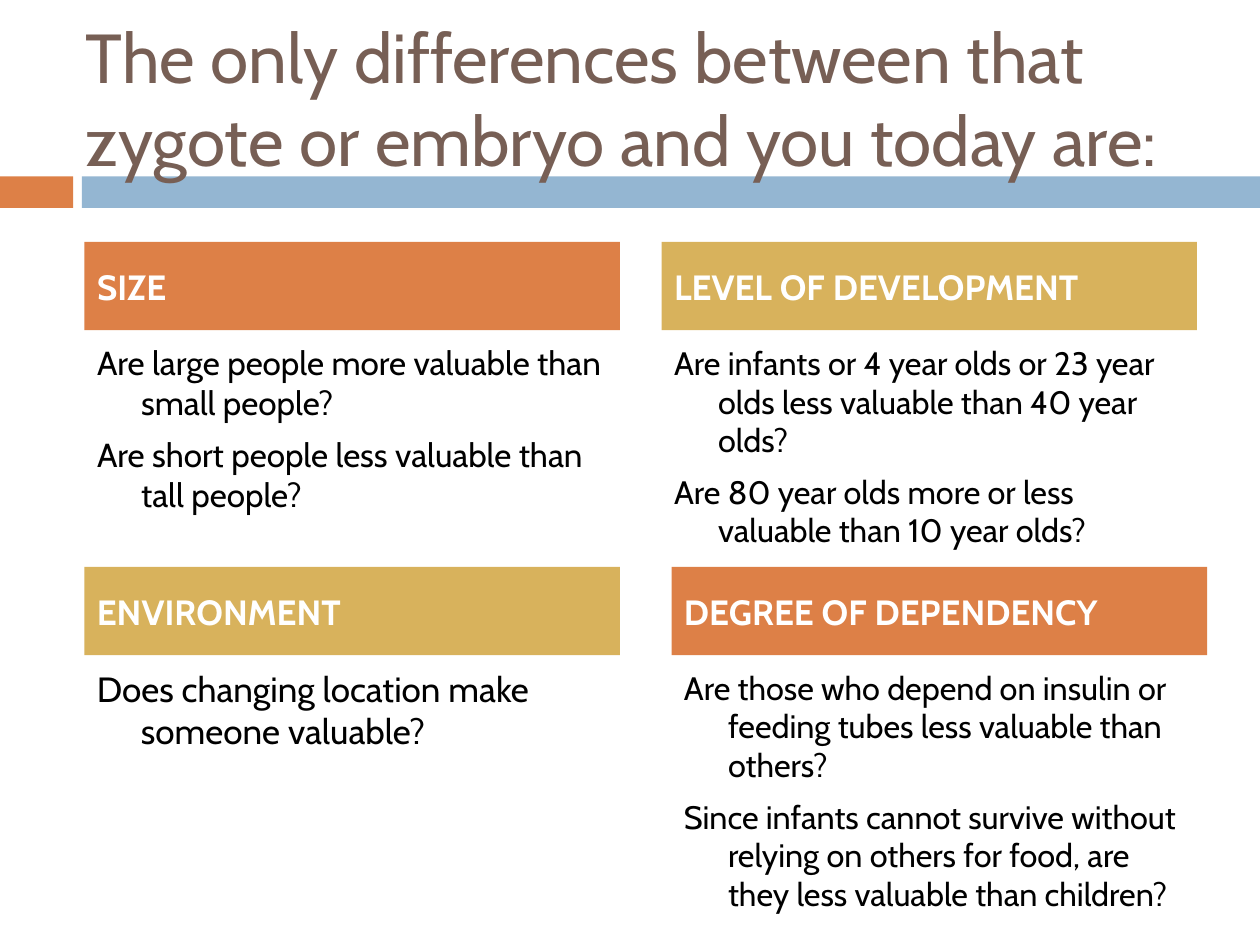
import pptx
import pptx.dml.color
import pptx.enum.shapes
import pptx.enum.text
import pptx.util
from lxml import etree

Inches = pptx.util.Inches
Pt = pptx.util.Pt
ANCHOR = pptx.enum.text.MSO_ANCHOR
ORANGE, GOLD, BLUE = "DD8047", "D8B25C", "94B6D2"
BROWN, BLACK, WHITE = "775F55", "000000", "FFFFFF"
COLUMN_WIDTH, HEADING_HEIGHT, QUESTIONS_OFFSET = 4.25, 0.7, 0.75
HANGING_INDENT = 0.35

# heading, fill, left, top, questions height, question size, placeholder ids, questions
TOPICS = [
    ("SIZE", ORANGE, 0.67, 1.92, 1.83, 19, (1, 2),
     ["Are large people more valuable than small people?",
      "Are short people less valuable than tall people?"]),
    ("LEVEL OF DEVELOPMENT", GOLD, 5.25, 1.92, 1.5, 18.5, (3, 4),
     ["Are infants or 4 year olds or 23 year olds less valuable than 40 year olds?",
      "Are 80 year olds more or less valuable than 10 year olds?"]),
    ("ENVIRONMENT", GOLD, 0.67, 4.5, 1.75, 20, None,
     ["Does changing location make someone valuable?"]),
    ("DEGREE OF DEPENDENCY", ORANGE, 5.33, 4.5, 1.75, 18.5, None,
     ["Are those who depend on insulin or feeding tubes less valuable than others?",
      "Since infants cannot survive without relying on others for food, "
      "are they less valuable than children?"]),
]


def color(hex_value):
    """Return the RGB colour for a hex string."""
    return pptx.dml.color.RGBColor.from_string(hex_value)


def apply_format(target, values):
    """Set each attribute named in a dict of format values."""
    for name, value in values.items():
        setattr(target, name, value)


def place(part, left, top, width, height):
    """Move and size a part, given in inches."""
    apply_format(part, {"left": Inches(left), "top": Inches(top),
                        "width": Inches(width), "height": Inches(height)})


def fill_solid(part, hex_value):
    """Fill a part with one colour and leave out its line."""
    part.fill.solid()
    part.fill.fore_color.rgb = color(hex_value)
    part.line.fill.background()


def add_bar(slide, left, top, width, height, hex_value):
    """Add a plain filled rectangle."""
    bar = slide.shapes.add_shape(pptx.enum.shapes.MSO_SHAPE.RECTANGLE, Inches(left),
                                 Inches(top), Inches(width), Inches(height))
    bar.shadow.inherit = False
    fill_solid(bar, hex_value)
    return bar


def write_text(part, lines, size, hex_value, anchor, bold=False, space=7):
    """Write left-aligned paragraphs in one format."""
    frame = part.text_frame
    apply_format(frame, {"word_wrap": True, "vertical_anchor": anchor,
                         "auto_size": pptx.enum.text.MSO_AUTO_SIZE.NONE})
    frame.text = "\n".join(lines)
    for paragraph in frame.paragraphs:
        apply_format(paragraph, {"alignment": pptx.enum.text.PP_ALIGN.LEFT,
                                 "space_before": Pt(space)})
        font = paragraph.runs[0].font
        apply_format(font, {"name": "Cabin", "size": Pt(size), "bold": bold})
        font.color.rgb = color(hex_value)


def hang_paragraphs(part):
    """Give paragraphs a hanging indent without bullets."""
    for paragraph in part.text_frame.paragraphs:
        paragraph.level = 4
        properties = paragraph._p.get_or_add_pPr()
        properties.set("marL", str(Inches(HANGING_INDENT)))
        properties.set("indent", str(-Inches(HANGING_INDENT)))
        etree.SubElement(properties, pptx.oxml.ns.qn("a:buNone"))


def add_topic(slide, heading, fill, left, top, height, size, placeholder_ids, questions):
    """Add a coloured heading with its questions below."""
    heading_box = (left, top, COLUMN_WIDTH, HEADING_HEIGHT)
    questions_box = (left, top + QUESTIONS_OFFSET, COLUMN_WIDTH, height)
    if placeholder_ids:
        heading_part, questions_part = [slide.placeholders[i] for i in placeholder_ids]
        place(heading_part, *heading_box)
        fill_solid(heading_part, fill)
        place(questions_part, *questions_box)
    else:
        heading_part = add_bar(slide, *heading_box, fill)
        questions_part = slide.shapes.add_textbox(*map(Inches, questions_box))
    write_text(heading_part, [heading], 20, WHITE, ANCHOR.MIDDLE, bold=True)
    write_text(questions_part, questions, size, BLACK, ANCHOR.TOP)
    hang_paragraphs(questions_part)


def add_title(slide, wording):
    """Fill and place the slide title above the bars."""
    title = slide.shapes.title
    place(title, 0.58, 0.3, 8.92, 0.95)
    write_text(title, [wording], 39.6, BROWN, ANCHOR.MIDDLE, space=0)
    tree = slide.shapes._spTree
    tree.remove(title._element)
    tree.append(title._element)


def main():
    """Build and save the slide."""
    deck = pptx.Presentation()
    apply_format(deck, {"slide_width": Inches(10), "slide_height": Inches(7.5)})
    slide = deck.slides.add_slide(deck.slide_layouts.get_by_name("Comparison"))
    add_bar(slide, 0, 1.4, 0.58, 0.25, ORANGE)
    add_bar(slide, 0.65, 1.4, 9.35, 0.25, BLUE)
    add_title(slide, "The only differences between that zygote or embryo and you today are:")
    for topic in TOPICS:
        add_topic(slide, *topic)
    deck.save("out.pptx")


if __name__ == "__main__":
    main()
